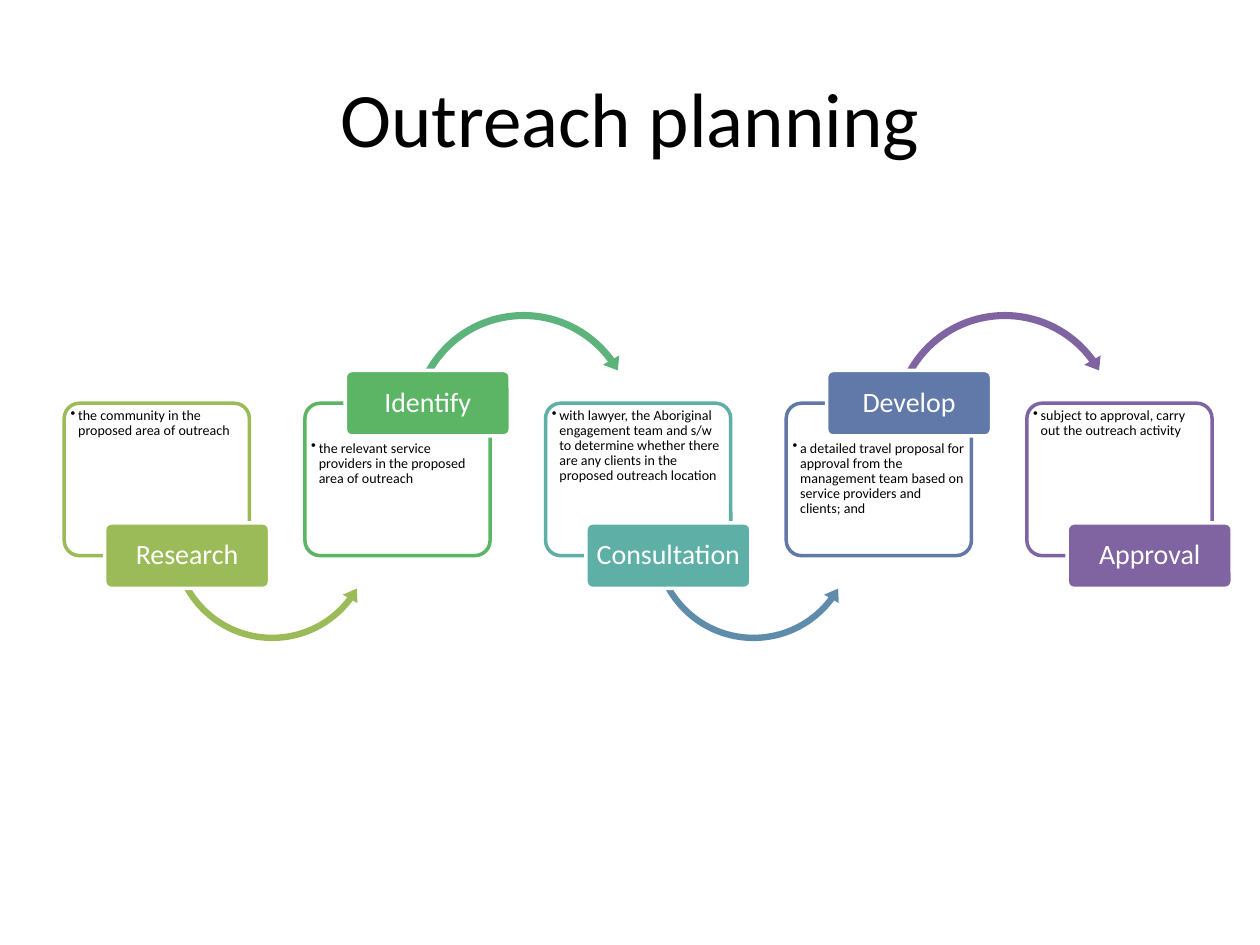
from lxml import etree
from pptx import Presentation
from pptx.dml.color import RGBColor
from pptx.enum.shapes import MSO_SHAPE
from pptx.enum.text import MSO_ANCHOR, PP_ALIGN
from pptx.oxml.ns import qn
from pptx.util import Inches, Pt

ROUNDED = MSO_SHAPE.ROUNDED_RECTANGLE
ARROW_OVER = MSO_SHAPE.CIRCULAR_ARROW
ARROW_UNDER = MSO_SHAPE.LEFT_CIRCULAR_ARROW
CENTER = PP_ALIGN.CENTER
TOP, MIDDLE = MSO_ANCHOR.TOP, MSO_ANCHOR.MIDDLE


def add_figure(slide, preset, box, adjustments, fill, outline=None):
    figure = slide.shapes.add_shape(preset, *[Inches(v) for v in box])
    for index, value in enumerate(adjustments):
        figure.adjustments[index] = value
    figure.shadow.inherit = False
    figure.fill.solid()
    figure.fill.fore_color.rgb = RGBColor.from_string(fill)
    if outline:
        figure.line.color.rgb = RGBColor.from_string(outline)
        figure.line.width = Pt(2)
    else:
        figure.line.fill.background()
    return figure


def write_text(frame, text, size, color, anchor, margin):
    frame.word_wrap = True
    frame.vertical_anchor = anchor
    frame.margin_left = frame.margin_right = Inches(margin)
    frame.margin_top = frame.margin_bottom = Inches(0.02)
    paragraph = frame.paragraphs[0]
    run = paragraph.add_run()
    run.text = text
    run.font.name = "Calibri"
    run.font.size = Pt(size)
    run.font.color.rgb = RGBColor.from_string(color)
    return paragraph


prs = Presentation()
prs.slide_width, prs.slide_height = Inches(10), Inches(7.5)
slide = prs.slides.add_slide(prs.slide_layouts[5])

title = slide.shapes.title
title.left, title.top = Inches(0.5), Inches(0.3)
title.width, title.height = Inches(9), Inches(1.25)
heading = write_text(title.text_frame, "Outreach planning", 44, "000000", MIDDLE, 0.1)
heading.alignment = CENTER

steps = [
    ("Research", "the community in the proposed area of outreach", "9BBB59", "9BBB59"),
    ("Identify", "the relevant service providers in the proposed area of outreach",
     "5CB565", "5CB37C"),
    ("Consultation", "with lawyer, the Aboriginal engagement team and s/w to determine "
     "whether there are any clients in the proposed outreach location", "5EAFA6", "608CAB"),
    ("Develop", "a detailed travel proposal for approval from the management team "
     "based on service providers and clients; and", "6179A8", "8064A2"),
    ("Approval", "subject to approval, carry out the outreach activity", "8064A2", None),
]

for number, (name, detail, color, arrow_color) in enumerate(steps):
    left = 0.51 + 1.91 * number
    label_on_top = number % 2 == 1

    add_figure(slide, ROUNDED, (left, 3.2, 1.47, 1.21), [0.1], "FFFFFF", color)

    detail_top = 3.48 if label_on_top else 3.22
    detail_box = slide.shapes.add_textbox(
        Inches(left + 0.03), Inches(detail_top), Inches(1.41), Inches(0.9))
    bullet = write_text(detail_box.text_frame, detail, 8, "000000", TOP, 0.02)
    bullet.line_spacing = 0.9
    properties = bullet._p.get_or_add_pPr()
    properties.set("marL", str(Inches(0.06)))
    properties.set("indent", str(-Inches(0.06)))
    etree.SubElement(properties, qn("a:buChar")).set("char", "•")

    if arrow_color and label_on_top:
        add_figure(slide, ARROW_OVER, (left + 0.8, 2.43, 1.87, 1.87),
                   [0.03, 3.88, 194.37, 125.76, 0.04], arrow_color)
    elif arrow_color:
        add_figure(slide, ARROW_UNDER, (left + 0.81, 3.45, 1.68, 1.68),
                   [0.03, 4.35, 22.1, 90.25, 0.04], arrow_color)

    label_top = 2.94 if label_on_top else 4.15
    label = add_figure(slide, ROUNDED, (left + 0.32, label_top, 1.31, 0.52),
                       [0.1], color, "FFFFFF")
    caption = write_text(label.text_frame, name, 16, "FFFFFF", MIDDLE, 0.03)
    caption.alignment = CENTER
    caption.line_spacing = 0.9

prs.save("out.pptx")
